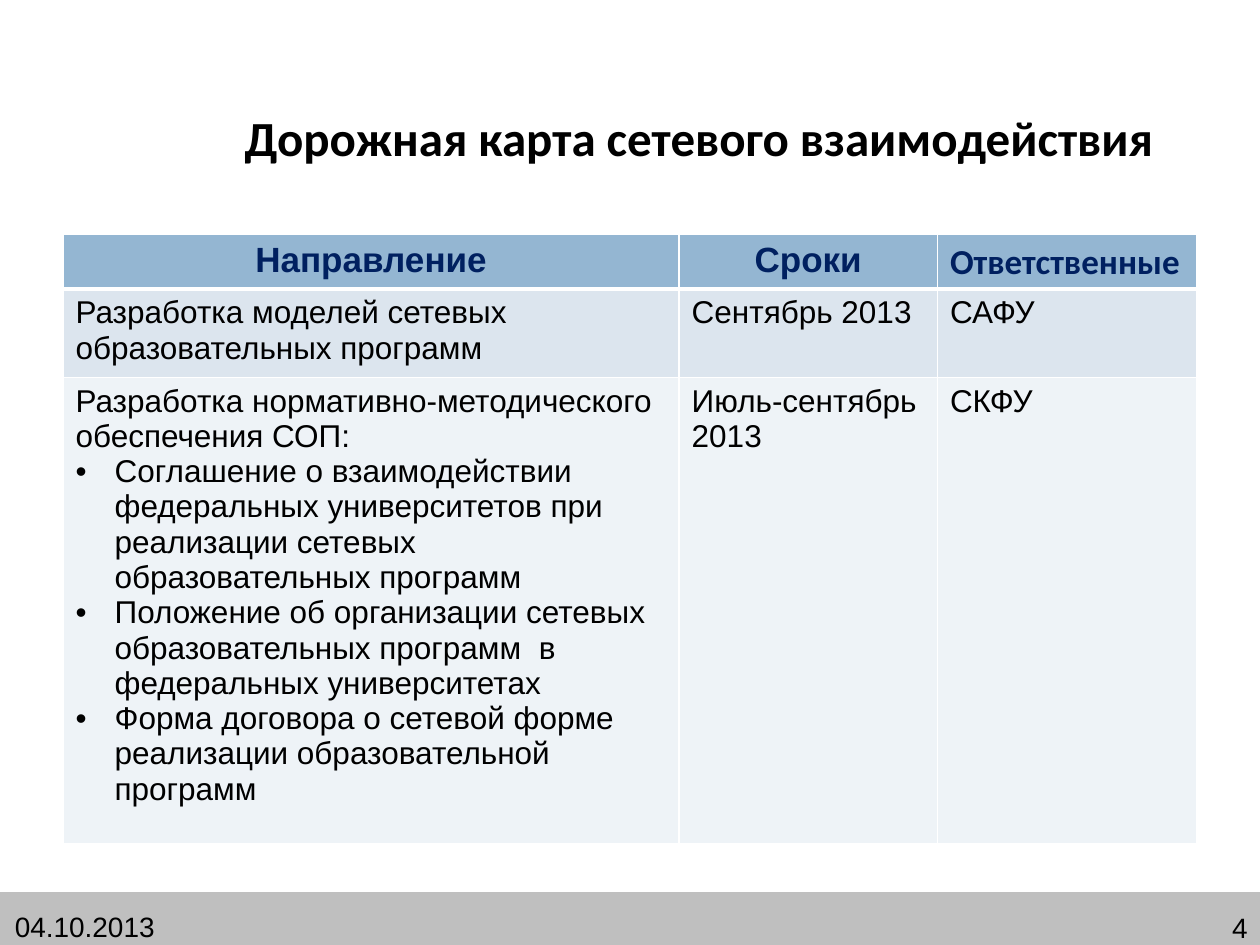
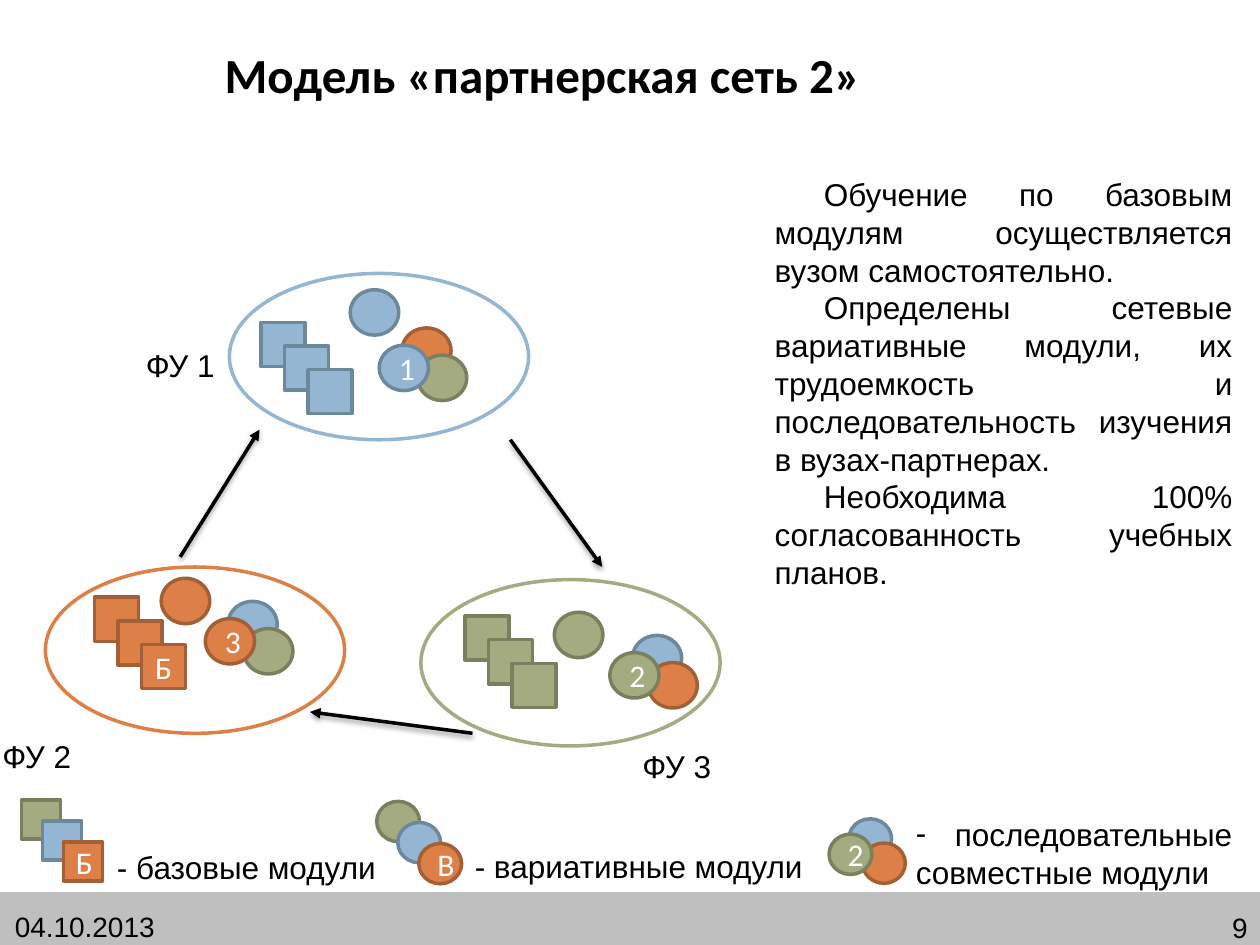
from dataclasses import dataclass

from lxml import etree
from pptx import Presentation
from pptx.dml.color import RGBColor
from pptx.enum.shapes import MSO_CONNECTOR, MSO_SHAPE
from pptx.enum.text import MSO_ANCHOR, MSO_AUTO_SIZE, PP_ALIGN
from pptx.oxml.ns import qn
from pptx.util import Inches, Pt

COLUMNS, ROWS = 100, 75
SLIDE_WIDTH, SLIDE_HEIGHT = Inches(10), Inches(7.5)
COLUMN, ROW = SLIDE_WIDTH / COLUMNS, SLIDE_HEIGHT / ROWS

RECTANGLE, OVAL = MSO_SHAPE.RECTANGLE, MSO_SHAPE.OVAL
STRAIGHT = MSO_CONNECTOR.STRAIGHT
LEFT, CENTER, RIGHT, JUSTIFY = PP_ALIGN.LEFT, PP_ALIGN.CENTER, PP_ALIGN.RIGHT, PP_ALIGN.JUSTIFY
MIDDLE = MSO_ANCHOR.MIDDLE
GROW = MSO_AUTO_SIZE.SHAPE_TO_FIT_TEXT

COLORS = {
    "black": "000000", "white": "FFFFFF", "band": "BFBFBF", "navy": "002060",
    "blue": "94B6D2", "blue_edge": "6D879B",
    "orange": "DD8047", "orange_edge": "A35F35",
    "olive": "A5AB81", "olive_edge": "7A7F5F",
    "row_dark": "DCE5EE", "row_light": "EEF3F7",
}
BODY = {"name": "Arial", "size": Pt(18), "bold": False, "color": "black"}
FOOTER = {**BODY, "size": Pt(16)}
TITLE = {"name": "Calibri", "size": Pt(28), "bold": True, "color": "black"}
HEADER = {"name": "Arial", "size": Pt(20), "bold": True, "color": "navy"}
MARK = {"name": "Calibri", "size": Pt(18), "bold": False, "color": "white"}
HANGING = Inches(0.31)


@dataclass
class Box:
    left: float
    top: float
    width: float
    height: float

    def inner(self, left, top, width, height):
        return Box(self.left + left, self.top + top, width, height)

    def emu(self):
        return (round(self.left * COLUMN), round(self.top * ROW),
                round(self.width * COLUMN), round(self.height * ROW))


PAGE = Box(0, 0, COLUMNS, ROWS)


def rgb(color):
    return RGBColor.from_string(COLORS[color])


def add_element(parent, tag, **attributes):
    element = etree.SubElement(parent, qn(tag))
    for name, value in attributes.items():
        element.set(name, str(value))
    return element


def write_paragraph(paragraph, text, style, align=LEFT, indent=0, bullet=None):
    properties = paragraph._p.get_or_add_pPr()
    if bullet:
        properties.set("marL", str(HANGING))
        indent = -HANGING
        add_element(properties, "a:buFont", typeface="Arial")
        add_element(properties, "a:buChar", char=bullet)
    properties.set("indent", str(indent))
    paragraph.alignment = align
    run = paragraph.add_run()
    run.text = text
    for name, value in style.items():
        if name == "color":
            run.font.color.rgb = rgb(value)
        else:
            setattr(run.font, name, value)


def write_lines(frame, lines, style, **options):
    for index, (text, bullet) in enumerate(lines):
        paragraph = frame.add_paragraph() if index else frame.paragraphs[0]
        write_paragraph(paragraph, text, style, bullet=bullet, **options)


def add_text(slide, box, lines, style=BODY, wrap=False, **options):
    frame = slide.shapes.add_textbox(*box.emu()).text_frame
    frame.word_wrap = wrap
    frame.auto_size = GROW
    write_lines(frame, lines, style, **options)


def add_figure(slide, kind, box, fill, edge=None, mark=None):
    shape = slide.shapes.add_shape(kind, *box.emu())
    shape.shadow.inherit = False
    shape.fill.solid()
    shape.fill.fore_color.rgb = rgb(fill)
    if edge:
        shape.line.color.rgb = rgb(edge)
        shape.line.width = Pt(2)
    else:
        shape.line.fill.background()
    if mark:
        shape.text_frame.vertical_anchor = MIDDLE
        write_paragraph(shape.text_frame.paragraphs[0], mark, MARK, CENTER)


def add_module(slide, kind, box, color, mark=None):
    add_figure(slide, kind, box, color, f"{color}_edge", mark)


def add_stack(slide, kind, box, colors, step, mark=None):
    last = len(colors) - 1
    for index, color in enumerate(colors):
        place = box.inner(index * step, index * step, box.width, box.height)
        add_module(slide, kind, place, color, mark if index == last else None)


def add_joint_modules(slide, front, colors, mark):
    offsets = [(0.46, -0.38), (0.78, 0.22), (0, 0)]
    for (across, down), color in zip(offsets, colors):
        place = front.inner(across * front.width, down * front.height, front.width, front.height)
        add_module(slide, OVAL, place, color, mark if color == colors[-1] else None)


def add_university(slide, box, color, partners, squares, circle, joint, number, letter=None):
    add_figure(slide, OVAL, box, "white", color)
    add_stack(slide, RECTANGLE, box.inner(*squares, 3.5, 3.5), [color] * 3, 1.87, letter)
    add_module(slide, OVAL, box.inner(*circle, 3.85, 3.6), color)
    add_joint_modules(slide, box.inner(*joint, 3.9, 3.6), [*partners, color], number)


def add_arrow(slide, start, end):
    points = [round(value * unit) for point in (start, end)
              for value, unit in zip(point, (COLUMN, ROW))]
    connector = slide.shapes.add_connector(STRAIGHT, *points)
    connector.line.color.rgb = rgb("black")
    connector.line.width = Pt(2)
    add_element(connector.line._get_or_add_ln(), "a:tailEnd", type="triangle")
    effects = add_element(connector._element.spPr, "a:effectLst")
    shadow = add_element(effects, "a:outerShdw", blurRad=Pt(3.1), dist=Pt(1.6),
                         dir=5400000, rotWithShape=0)
    tint = add_element(shadow, "a:srgbClr", val=COLORS["black"])
    add_element(tint, "a:alpha", val=38000)


def add_page(presentation, title, title_box, number):
    slide = presentation.slides.add_slide(presentation.slide_layouts[5])
    placeholder = slide.shapes.title
    placeholder.left, placeholder.top, placeholder.width, placeholder.height = title_box.emu()
    placeholder.text_frame.vertical_anchor = MIDDLE
    write_paragraph(placeholder.text_frame.paragraphs[0], title, TITLE, CENTER)
    band = PAGE.inner(-0.8, 70.8, 101.7, 4.2)
    add_figure(slide, RECTANGLE, band, "band")
    add_text(slide, band.inner(1, 0.9, 23.3, 4), [("04.10.2013", None)], FOOTER, wrap=True)
    add_text(slide, band.inner(77.5, 1, 23.3, 4), [(number, None)], FOOTER, wrap=True, align=RIGHT)
    return slide


def format_cell(cell, fill, bottom):
    properties = cell._tc.get_or_add_tcPr()
    for side, width in (("L", 1), ("R", 1), ("T", 1), ("B", bottom)):
        line = add_element(properties, f"a:ln{side}", w=Pt(width))
        add_element(add_element(line, "a:solidFill"), "a:srgbClr", val=COLORS["white"])
    cell.fill.solid()
    cell.fill.fore_color.rgb = rgb(fill)


def add_roadmap(slide, box):
    headers = [("Направление", CENTER, "Arial"), ("Сроки", CENTER, "Arial"),
               ("Ответственные", LEFT, "Calibri")]
    documents = [
        "Соглашение о взаимодействии федеральных университетов при реализации сетевых образовательных программ",
        "Положение об организации сетевых образовательных программ  в федеральных университетах",
        "Форма договора о сетевой форме реализации образовательной программ",
    ]
    methods = [("Разработка нормативно-методического обеспечения СОП:", None),
               *((text, "•") for text in documents)]
    body = [
        ([("Разработка моделей сетевых образовательных программ", None)], "Сентябрь 2013", "САФУ"),
        (methods, "Июль-сентябрь 2013", "СКФУ"),
    ]
    table = slide.shapes.add_table(3, 3, *box.emu()).table
    for column, width in zip(table.columns, (48.9, 20.5, 20.6)):
        column.width = round(width * COLUMN)
    for row, height in zip(table.rows, (4.3, 6.6, 34.4)):
        row.height = round(height * ROW)
    for cell, (text, align, font) in zip(table.rows[0].cells, headers):
        format_cell(cell, "blue", 3)
        write_lines(cell.text_frame, [(text, None)], {**HEADER, "name": font}, align=align)
    for index, (direction, period, owner) in enumerate(body, 1):
        contents = [direction, [(period, None)], [(owner, None)]]
        for cell, lines in zip(table.rows[index].cells, contents):
            format_cell(cell, "row_dark" if index == 1 else "row_light", 1)
            write_lines(cell.text_frame, lines, BODY)


def add_network(slide, box):
    add_university(slide, box.inner(14.6, 0, 23.75, 13.2), "blue", ["orange", "olive"],
                   (2.5, 3.9), (9.6, 1.3), (11.9, 5.7), "1")
    add_university(slide, box.inner(0, 23.3, 23.75, 13.2), "orange", ["blue", "olive"],
                   (3.9, 2.4), (9.2, 0.9), (12.7, 4.1), "3", "Б")
    add_university(slide, box.inner(29.8, 24.3, 23.75, 13.2), "olive", ["blue", "orange"],
                   (3.5, 2.9), (10.6, 2.6), (15, 5.8), "2")
    for start, end in (((14.3, 44.2), (20.6, 34.1)), ((40.5, 34.9), (47.8, 45)),
                       ((37.5, 58.2), (24.6, 56.5))):
        add_arrow(slide, start, end)
    for name, left, top in (("ФУ 1", 7, 5.3), ("ФУ 2", -4.4, 36.3), ("ФУ 3", 46.4, 37.1)):
        add_text(slide, box.inner(left, top, 7.7, 4.5), [(name, None)])


def add_legend(slide, box):
    colors = ["olive", "blue", "orange"]
    add_stack(slide, RECTANGLE, box.inner(0, 0, 3.1, 3.1), colors, 1.67, "Б")
    add_text(slide, box.inner(6.6, 3.3, 22.8, 4), [("- базовые модули", None)])
    add_stack(slide, OVAL, box.inner(28.2, 0.1, 3.4, 3.2), colors, 1.67, "В")
    add_text(slide, box.inner(35, 3.2, 28.3, 4), [("- вариативные модули", None)])
    add_joint_modules(slide, box.inner(64.1, 2.7, 3.4, 3.2), ["blue", "orange", "olive"], "2")
    add_text(slide, box.inner(70, 0.7, 28.7, 7.1),
             [("последовательные", "-"), ("совместные модули", None)])


def add_explanation(slide, box):
    lines = [
        "Обучение по базовым модулям осуществляется вузом самостоятельно.",
        "Определены сетевые вариативные модули, их трудоемкость и последовательность изучения в вузах-партнерах.",
        "Необходима 100% согласованность учебных планов.",
    ]
    add_text(slide, box, [(line, None) for line in lines], wrap=True,
             align=JUSTIFY, indent=Inches(0.39))


def main():
    presentation = Presentation()
    presentation.slide_width, presentation.slide_height = SLIDE_WIDTH, SLIDE_HEIGHT
    roadmap = add_page(presentation, "Дорожная карта сетевого взаимодействия",
                       PAGE.inner(16.7, 6.7, 77.5, 8.3), "4")
    add_roadmap(roadmap, PAGE.inner(5, 18.6, 90, 45.3))
    model = add_page(presentation, "Модель «партнерская сеть 2»",
                     PAGE.inner(4.3, 1.7, 77.5, 8.3), "9")
    add_network(model, PAGE.inner(3.6, 21.7, 53.6, 37.5))
    add_legend(model, PAGE.inner(1.7, 63.5, 98.7, 7.1))
    add_explanation(model, PAGE.inner(60.5, 13.4, 38.3, 34.3))
    presentation.save("out.pptx")


if __name__ == "__main__":
    main()
